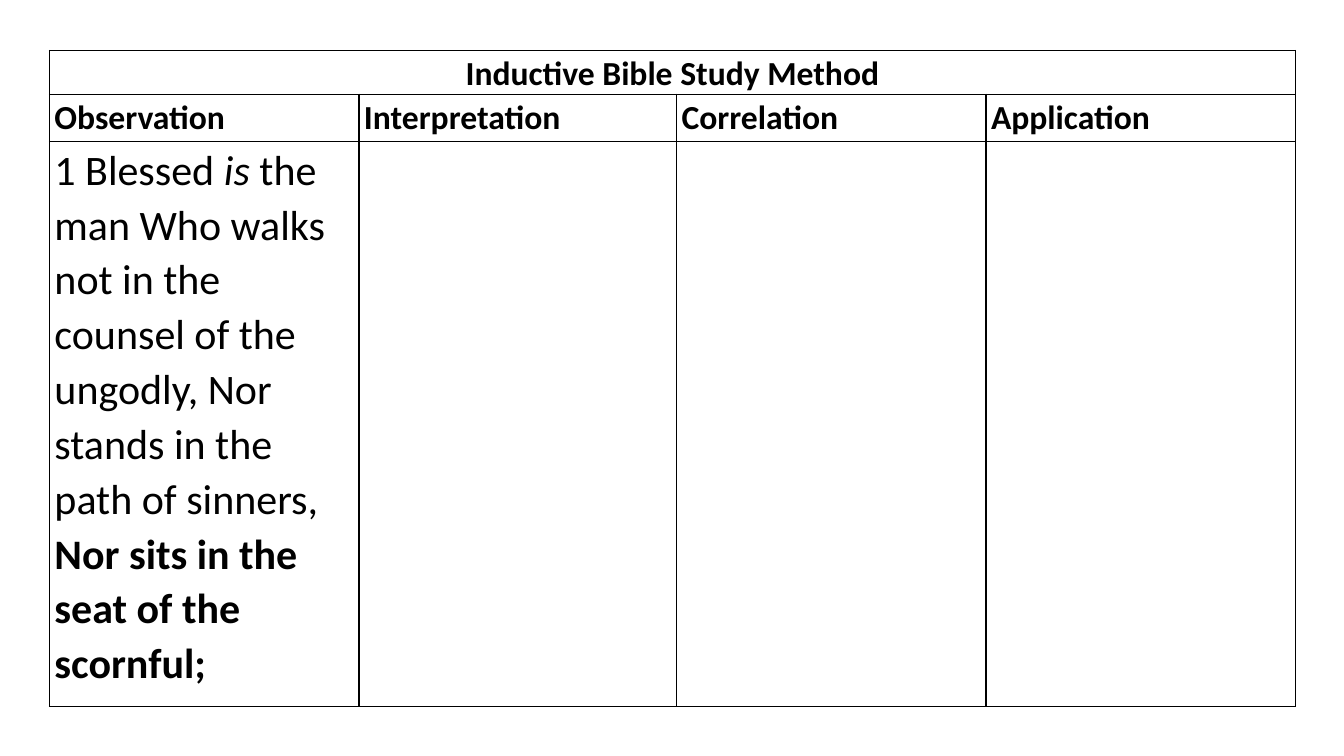
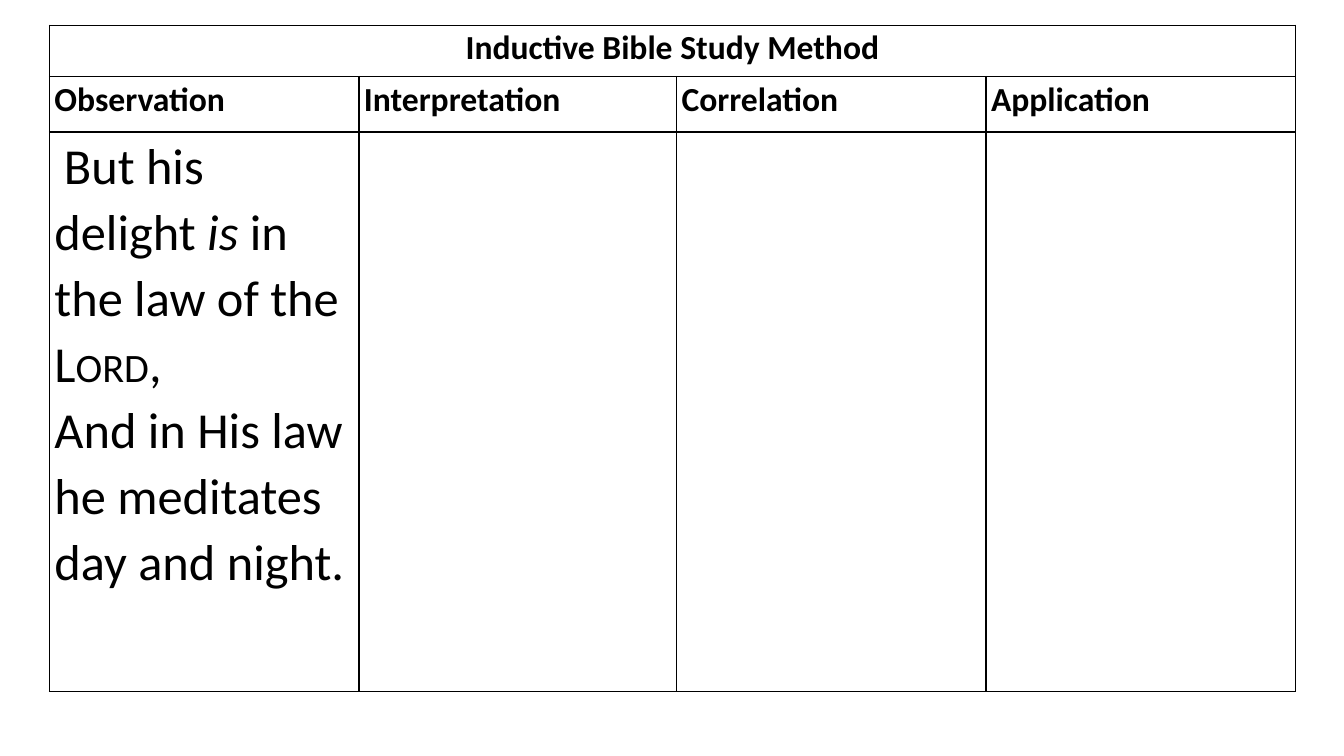
from lxml.etree import SubElement
from pptx import Presentation
from pptx.dml.color import RGBColor
from pptx.enum.text import PP_ALIGN
from pptx.oxml.ns import qn
from pptx.util import Emu, Pt

TITLE = "Inductive Bible Study Method"
HEADS = ["Observation", "Interpretation", "Correlation", "Application"]
COLS = [307, 315, 307, 307]
LEFT = 49

PLAIN, ITALIC, BOLD, SMALL = {}, {"italic": True}, {"bold": True}, {"cap": "small"}

SLIDES = [
    {
        "top": 50,
        "rows": [43, 47, 560],
        "size": 30,
        "verse": [
            [("1 Blessed ", PLAIN), ("is", ITALIC), (" the man Who walks", PLAIN)],
            [("not in the counsel of the", PLAIN)],
            [
                ("ungodly, Nor stands in the path of sinners,\n", PLAIN),
                ("Nor sits in the seat of the scornful;", BOLD),
            ],
        ],
    },
    {
        "top": 25,
        "rows": [51, 55, 555],
        "size": 36,
        "verse": [
            [
                (" ", {"size": Pt(30)}),
                ("But his delight ", PLAIN),
                ("is", ITALIC),
                (" in the law of the ", PLAIN),
                ("Lord", SMALL),
                (",\nAnd in His law he meditates day and night.", PLAIN),
            ]
        ],
    },
]

THEME = {
    "font": "Calibri",
    "ink": "000000",
    "paper": "FFFFFF",
    "head": 24,
    "line": 1,
    "space": 1.07,
}


def px(n):
    return Emu(n * 9144)


def style(run, size, look):
    font = run.font
    font.color.rgb = RGBColor.from_string(THEME["ink"])
    base = {"name": THEME["font"], "size": Pt(size), "bold": False, "italic": False}
    for key, value in {**base, **look}.items():
        if key == "cap":
            run._r.get_or_add_rPr().set(key, value)
        else:
            setattr(font, key, value)


def write(cell, paras, size, align=PP_ALIGN.LEFT):
    frame = cell.text_frame
    for i, parts in enumerate(paras):
        para = frame.add_paragraph() if i else frame.paragraphs[0]
        para.alignment = align
        para.line_spacing = THEME["space"]
        for text, look in parts:
            for j, line in enumerate(text.split("\n")):
                if j:
                    para.add_line_break()
                if line:
                    run = para.add_run()
                    run.text = line
                    style(run, size, look)


def frame_cell(cell):
    props = cell._tc.get_or_add_tcPr()
    for side in "LRTB":
        edge = SubElement(props, qn(f"a:ln{side}"), w=str(Pt(THEME["line"])))
        fill = SubElement(edge, qn("a:solidFill"))
        SubElement(fill, qn("a:srgbClr"), val=THEME["ink"])
    cell.fill.solid()
    cell.fill.fore_color.rgb = RGBColor.from_string(THEME["paper"])
    margins = {"left": 5, "right": 5, "top": 0, "bottom": 0}
    for side, gap in margins.items():
        setattr(cell, f"margin_{side}", px(gap))


def build(deck, data):
    slide = deck.slides.add_slide(deck.slide_layouts[6])
    rows = data["rows"]
    box = [px(n) for n in (LEFT, data["top"], sum(COLS), sum(rows))]
    table = slide.shapes.add_table(len(rows), len(COLS), *box).table
    table.first_row = table.horz_banding = False
    for col, width in zip(table.columns, COLS):
        col.width = px(width)
    for row, height in zip(table.rows, rows):
        row.height = px(height)
    for cell in table.iter_cells():
        frame_cell(cell)
    table.cell(0, 0).merge(table.cell(0, len(COLS) - 1))
    write(table.cell(0, 0), [[(TITLE, BOLD)]], THEME["head"], PP_ALIGN.CENTER)
    for i, head in enumerate(HEADS):
        write(table.cell(1, i), [[(head, BOLD)]], THEME["head"])
    write(table.cell(2, 0), data["verse"], data["size"])


def main():
    deck = Presentation()
    deck.slide_width, deck.slide_height = px(1333), px(750)
    for data in SLIDES:
        build(deck, data)
    deck.save("out.pptx")


if __name__ == "__main__":
    main()
